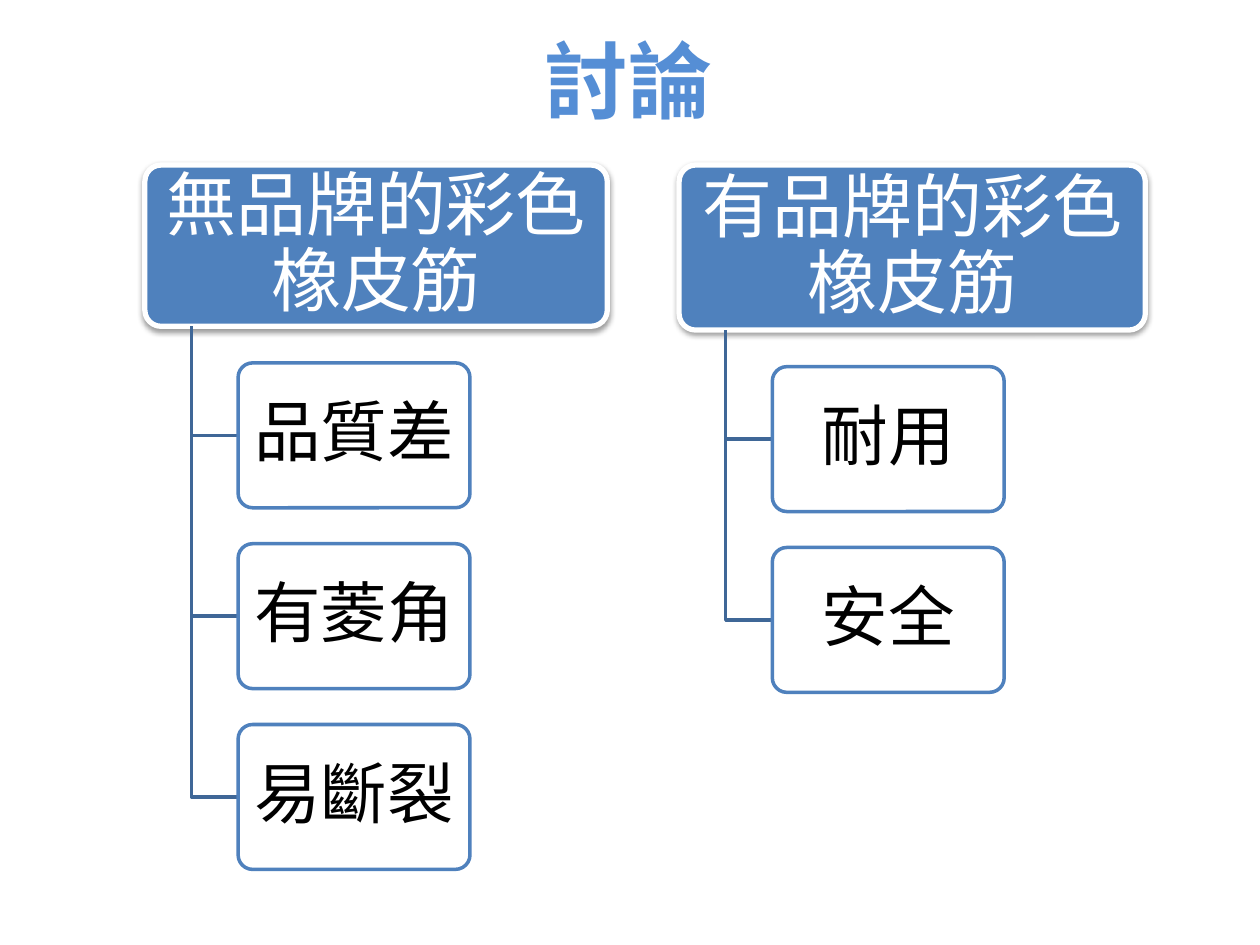
from lxml.etree import SubElement
from pptx import Presentation
from pptx.dml.color import RGBColor
from pptx.enum.shapes import MSO_SHAPE
from pptx.enum.text import MSO_ANCHOR, PP_ALIGN
from pptx.oxml.ns import qn
from pptx.util import Inches, Pt

FONT = "Noto Sans CJK SC"
COLORS = {
    "title": "558ED5",
    "blue": "4F81BD",
    "branch": "3F6797",
    "white": "FFFFFF",
    "black": "000000",
}


def write_text(shape, text, size, color, bold=False, spacing=1.0, inset=(0.1, 0.05)):
    frame = shape.text_frame
    frame.word_wrap = True
    frame.vertical_anchor = MSO_ANCHOR.MIDDLE
    frame.margin_left = frame.margin_right = Inches(inset[0])
    frame.margin_top = frame.margin_bottom = Inches(inset[1])
    paragraph = frame.paragraphs[0]
    paragraph.alignment = PP_ALIGN.CENTER
    paragraph.line_spacing = spacing
    run = paragraph.add_run()
    run.text = text
    run.font.size = Pt(size)
    run.font.bold = bold
    run.font.color.rgb = RGBColor.from_string(COLORS[color])
    run.font.name = FONT
    SubElement(run.font._element, qn("a:ea"), typeface=FONT)


def add_box(left, top, width, height, fill, line, line_width):
    box = slide.shapes.add_shape(
        MSO_SHAPE.ROUNDED_RECTANGLE,
        Inches(left), Inches(top), Inches(width), Inches(height))
    box.adjustments[0] = 0.1
    box.shadow.inherit = False
    box.fill.solid()
    box.fill.fore_color.rgb = RGBColor.from_string(COLORS[fill])
    box.line.color.rgb = RGBColor.from_string(COLORS[line])
    box.line.width = Pt(line_width)
    return box


prs = Presentation()
prs.slide_width, prs.slide_height = Inches(10), Inches(7.5)
slide = prs.slides.add_slide(prs.slide_layouts[5])

# Title
title = slide.shapes.title
title.left, title.top = Inches(0.9), Inches(0)
title.width, title.height = Inches(8.17), Inches(1.25)
write_text(title, "討論", 48, "title", bold=True)

# Two hierarchies: left, header width, header height, header, findings
hierarchies = [
    (1.15, 3.67, 1.28, "無品牌的彩色橡皮筋", ["品質差", "有菱角", "易斷裂"]),
    (5.39, 3.7, 1.31, "有品牌的彩色橡皮筋", ["耐用", "安全"]),
]
HEADER_TOP = 1.31
FINDING_WIDTH, FINDING_HEIGHT = 1.84, 1.15
GAP, STEP = 0.29, 1.435

for left, width, height, heading, findings in hierarchies:
    # Header with a soft shadow below
    header = add_box(left, HEADER_TOP, width, height, "blue", "white", 3)
    effects = header._element.spPr.find(qn("a:effectLst"))
    shadow = SubElement(effects, qn("a:outerShdw"), blurRad=str(Pt(3.1)),
                        dist=str(Pt(1.6)), dir="5400000", rotWithShape="0")
    shadow_color = SubElement(shadow, qn("a:srgbClr"), val=COLORS["black"])
    SubElement(shadow_color, qn("a:alpha"), val="38000")
    write_text(header, heading, 40, "white", spacing=0.9, inset=(0.08, 0.06))

    header_bottom = HEADER_TOP + height
    trunk_x = left + 0.37
    finding_left = trunk_x + 0.37
    for row, finding in enumerate(findings):
        finding_top = header_bottom + GAP + row * STEP
        middle = finding_top + FINDING_HEIGHT / 2

        # Elbow from the header to the finding
        elbow = slide.shapes.build_freeform(Inches(trunk_x), Inches(header_bottom))
        elbow.add_line_segments(
            [(Inches(trunk_x), Inches(middle)), (Inches(finding_left), Inches(middle))],
            close=False)
        branch = elbow.convert_to_shape()
        branch.shadow.inherit = False
        branch.fill.background()
        branch.line.color.rgb = RGBColor.from_string(COLORS["branch"])
        branch.line.width = Pt(2)

        # Finding, slightly transparent
        box = add_box(finding_left, finding_top, FINDING_WIDTH, FINDING_HEIGHT,
                      "white", "blue", 2)
        fill_color = box._element.spPr.find(qn("a:solidFill")).find(qn("a:srgbClr"))
        SubElement(fill_color, qn("a:alpha"), val="90000")
        write_text(box, finding, 38, "black", spacing=0.9, inset=(0.08, 0.05))

prs.save("out.pptx")
